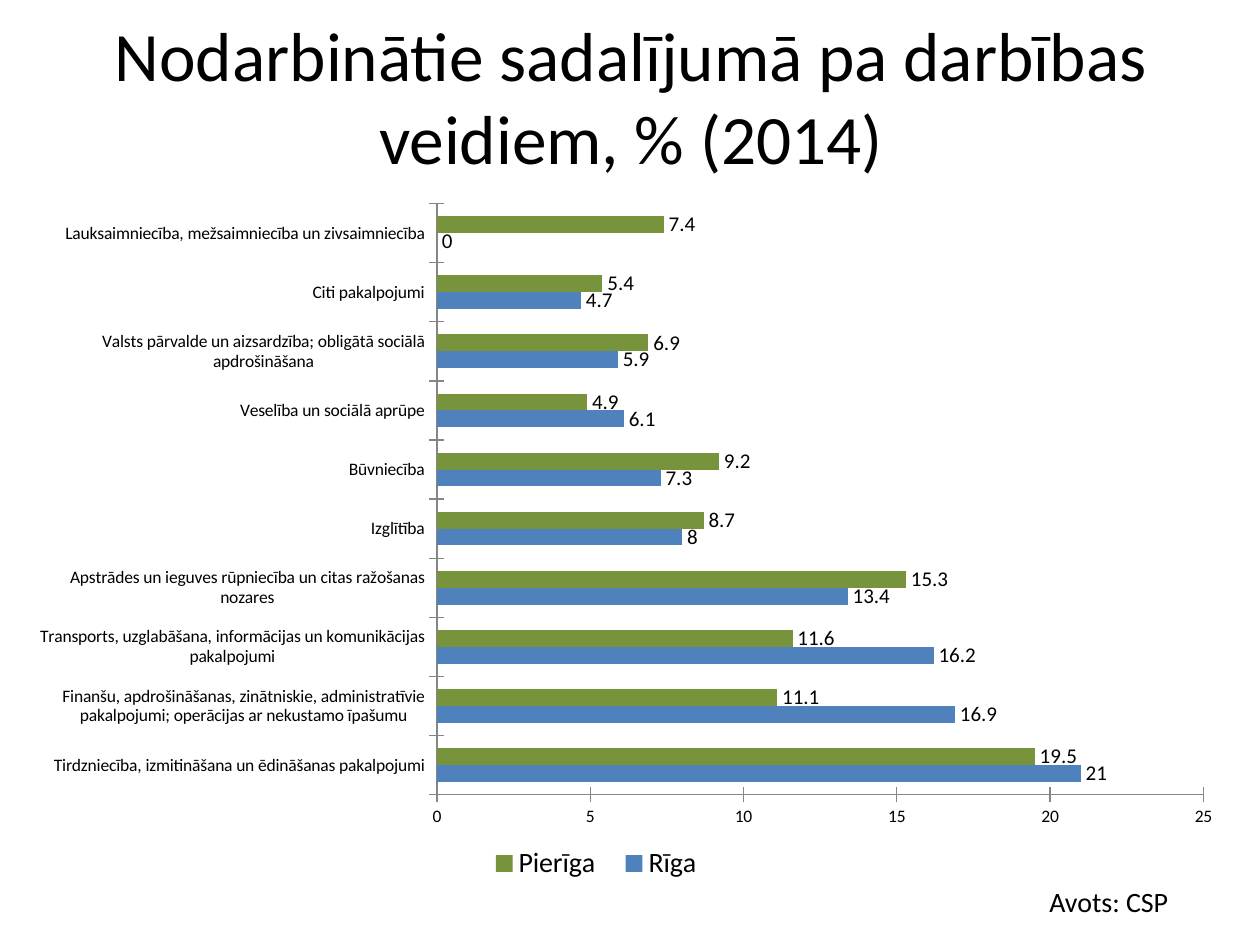
"""Build a slide with a bar chart of employment by sector in Rīga and Pierīga."""
from lxml.etree import SubElement
from pptx import Presentation
from pptx.chart.data import CategoryChartData
from pptx.dml.color import RGBColor
from pptx.enum.chart import XL_CHART_TYPE as CT, XL_LABEL_POSITION as LP
from pptx.enum.chart import XL_LEGEND_POSITION as LG, XL_TICK_MARK as TM
from pptx.enum.text import MSO_ANCHOR as MA, PP_ALIGN as PA
from pptx.oxml.ns import qn
from pptx.util import Emu, Pt

PX = 914400 / 126
FONT = "Calibri"


def style(font, size, color="000000"):
    font.size, font.name = Pt(size), FONT
    font.color.rgb = RGBColor.from_string(color)


def text(s, words, box, size=16, align=PA.LEFT, anchor=MA.TOP, before=0):
    sp = s.shapes.add_textbox(*[Emu(round(v * PX)) for v in box])
    tf = sp.text_frame
    tf.word_wrap, tf.vertical_anchor = True, anchor
    p = tf.paragraphs[0]
    p.alignment, p.space_before = align, Pt(before)
    r = p.add_run()
    r.text = words
    style(r.font, size)


prs = Presentation()
prs.slide_width, prs.slide_height = Emu(round(1260 * PX)), Emu(round(945 * PX))
s = prs.slides.add_slide(prs.slide_layouts[6])

text(s, "Nodarbinātie sadalījumā pa darbības veidiem, % (2014)",
     (64, 16, 1134, 158), size=39.6, align=PA.CENTER, anchor=MA.MIDDLE)
text(s, "Avots: CSP", (1037, 878, 203, 48), align=PA.JUSTIFY, before=3.2)

rows = [
    ("Tirdzniecība, izmitināšana un ēdināšanas pakalpojumi", 21, 19.5),
    ("Finanšu, apdrošināšanas, zinātniskie, administratīvie pakalpojumi; "
     "operācijas ar nekustamo īpašumu", 16.9, 11.1),
    ("Transports, uzglabāšana, informācijas un komunikācijas pakalpojumi", 16.2, 11.6),
    ("Apstrādes un ieguves rūpniecība un citas ražošanas nozares", 13.4, 15.3),
    ("Izglītība", 8, 8.7),
    ("Būvniecība", 7.3, 9.2),
    ("Veselība un sociālā aprūpe", 6.1, 4.9),
    ("Valsts pārvalde un aizsardzība; obligātā sociālā apdrošināšana", 5.9, 6.9),
    ("Citi pakalpojumi", 4.7, 5.4),
    ("Lauksaimniecība, mežsaimniecība un zivsaimniecība", 0, 7.4),
]
cats, riga, pieriga = zip(*rows)
data = CategoryChartData()
data.categories = cats
data.add_series("Rīga", riga)
data.add_series("Pierīga", pieriga)
box = [Emu(round(v * PX)) for v in (25, 175, 1215, 714)]
chart = s.shapes.add_chart(CT.BAR_CLUSTERED, *box, data).chart
style(chart.font, 10)
chart.has_title = False

plot = chart.plots[0]
plot.gap_width, plot.overlap, plot.vary_by_categories = 150, 0, False
for series, color in zip(plot.series, ("4F81BD", "77933C")):
    series.format.fill.solid()
    series.format.fill.fore_color.rgb = RGBColor.from_string(color)
    series.invert_if_negative = False
    labels = series.data_labels
    labels.show_value, labels.position = True, LP.OUTSIDE_END
    style(labels.font, 12)

for axis in (chart.category_axis, chart.value_axis):
    axis.has_major_gridlines = False
    axis.major_tick_mark = TM.CROSS
    axis.format.line.color.rgb = RGBColor.from_string("868686")
    axis.format.line.width = Pt(0.75)
    style(axis.tick_labels.font, 10)
chart.value_axis.minimum_scale, chart.value_axis.maximum_scale = 0, 25
chart.value_axis.major_unit = 5

chart.has_legend = True
legend = chart.legend
legend.position, legend.include_in_layout = LG.RIGHT, False
style(legend.font, 16)

area = chart._chartSpace.chart.plotArea
for parent, inner, spot in ((area, True, (0.339, 0.04, 0.631, 0.828)),
                            (legend._element, False, (0.37, 0.94, 0.2, 0.06))):
    for old in parent.findall(qn("c:layout")):
        parent.remove(old)
    layout = SubElement(parent, qn("c:layout"))
    parent.insert(0 if inner else 1, layout)
    manual = SubElement(layout, qn("c:manualLayout"))
    tags = [("layoutTarget", "inner")] if inner else []
    tags += [("xMode", "edge"), ("yMode", "edge"), *zip("xywh", spot)]
    for tag, val in tags:
        SubElement(manual, qn(f"c:{tag}")).set("val", str(val))

prs.save("out.pptx")
